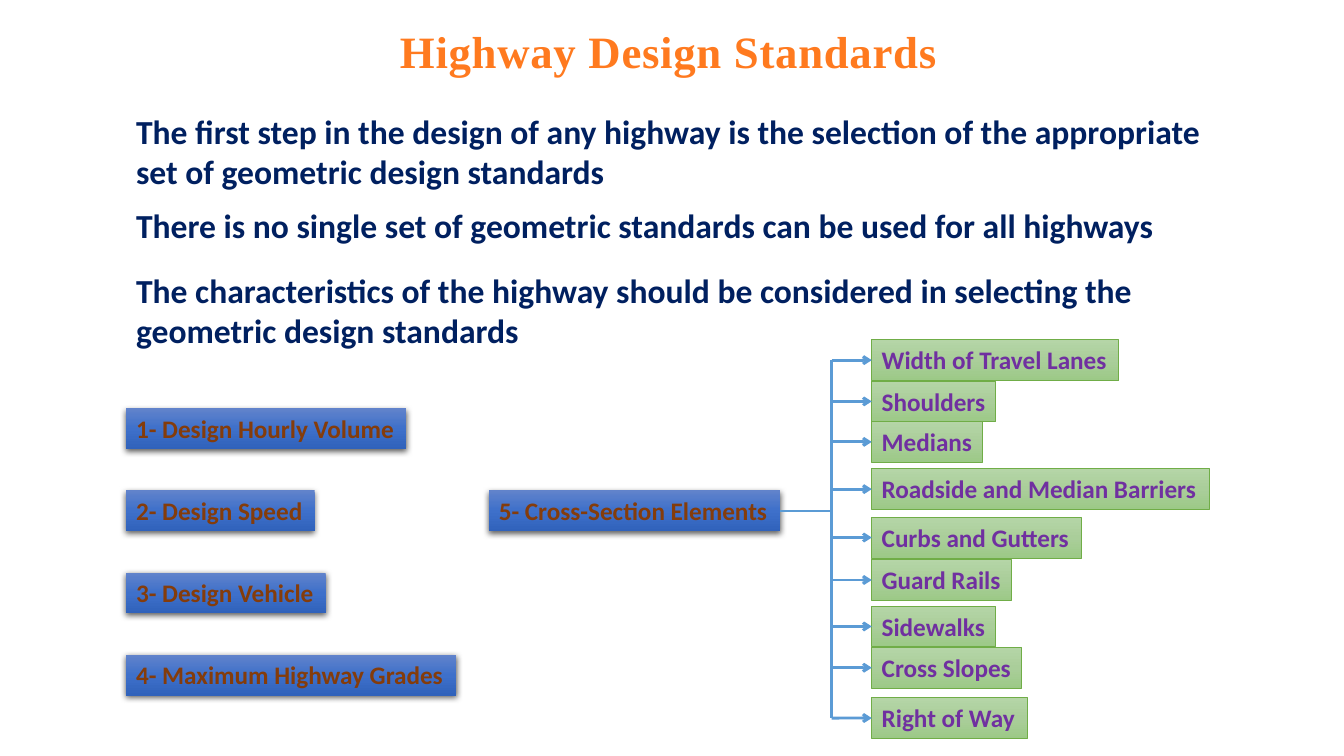
from dataclasses import dataclass

from lxml.etree import SubElement
from pptx import Presentation
from pptx.dml.color import RGBColor
from pptx.enum.shapes import MSO_CONNECTOR, MSO_SHAPE
from pptx.enum.text import MSO_ANCHOR, MSO_AUTO_SIZE, PP_ALIGN
from pptx.oxml.ns import qn
from pptx.util import Cm, Pt


@dataclass(frozen=True)
class Theme:
    body_font: str = "Calibri"
    title_font: str = "Times New Roman"
    title_size: int = 32
    body_size: int = 24
    label_size: int = 18
    title_fill: tuple = ((25, "FF7A1F"), (100, "CA5200"))
    body: str = "002060"
    standard_fill: tuple = ((0, "6183CB"), (50, "3E70CA"), (100, "3062BB"))
    standard_text: str = "843C0B"
    element_fill: tuple = ((0, "B5D5A7"), (50, "AACE9A"), (100, "9CC987"))
    element_text: str = "7030A0"
    element_edge: str = "70AD47"
    branch: str = "5B9BD5"


THEME = Theme()
LABEL_HEIGHT = 1.03

STATEMENTS = [  # text, top, width, height
    ("The first step in the design of any highway is the selection of the "
     "appropriate set of geometric design standards", 2.67, 28.37, 2.31),
    ("There is no single set of geometric standards can be used for all highways",
     5.05, 27.1, 1.32),
    ("The characteristics of the highway should be considered in selecting the "
     "geometric design standards", 6.68, 28.37, 2.31),
]
STANDARDS = [  # text, width
    ("1- Design Hourly Volume", 7.06),
    ("2- Design Speed", 4.75),
    ("3- Design Vehicle", 5.03),
    ("4- Maximum Highway Grades", 8.31),
]
ELEMENTS = [  # text, offset from the top of the tree, width
    ("Width of Travel Lanes", 0, 6.22),
    ("Shoulders", 1.04, 3.12),
    ("Medians", 2.06, 2.79),
    ("Roadside and Median Barriers", 3.25, 8.51),
    ("Curbs and Gutters", 4.47, 5.28),
    ("Guard Rails", 5.54, 3.53),
    ("Sidewalks", 6.71, 3.12),
    ("Cross Slopes", 7.75, 3.78),
    ("Right of Way", 9.02, 3.91),
]


def paint_gradient(fill, owner, stops):
    """Fill from top to bottom with the given (percent, colour) stops."""
    fill.gradient()
    fill.gradient_angle = 270
    stop_list = owner.find(".//" + qn("a:gsLst"))
    for old_stop in list(stop_list):
        stop_list.remove(old_stop)
    for percent, color in stops:
        stop = SubElement(stop_list, qn("a:gs"), pos=str(percent * 1000))
        SubElement(stop, qn("a:srgbClr"), val=color)


def add_run(frame, text, size, font, color=None):
    paragraph = frame.paragraphs[0]
    paragraph.alignment = PP_ALIGN.LEFT
    run = paragraph.add_run()
    run.text = text
    run.font.size, run.font.name, run.font.bold = Pt(size), font, True
    if color:
        run.font.color.rgb = RGBColor.from_string(color)
    return run


def add_label(slide, text, left, top, width, stops, color):
    label = slide.shapes.add_shape(
        MSO_SHAPE.RECTANGLE, Cm(left), Cm(top), Cm(width), Cm(LABEL_HEIGHT))
    paint_gradient(label.fill, label._element.spPr, stops)
    label.shadow.inherit = False
    frame = label.text_frame
    frame.word_wrap = False
    frame.auto_size = MSO_AUTO_SIZE.SHAPE_TO_FIT_TEXT
    frame.vertical_anchor = MSO_ANCHOR.TOP
    add_run(frame, text, THEME.label_size, THEME.body_font, color)
    return label


def add_standard(slide, text, left, top, width):
    label = add_label(slide, text, left, top, width,
                      THEME.standard_fill, THEME.standard_text)
    label.line.fill.background()
    effects = label._element.spPr.find(qn("a:effectLst"))
    shadow = SubElement(effects, qn("a:outerShdw"), blurRad=str(Pt(4.5)),
                        dist=str(Pt(1.5)), dir="5400000", algn="ctr", rotWithShape="0")
    black = SubElement(shadow, qn("a:srgbClr"), val="000000")
    SubElement(black, qn("a:alpha"), val="63000")
    return label


def add_element(slide, text, left, top, width):
    label = add_label(slide, text, left, top, width,
                      THEME.element_fill, THEME.element_text)
    label.line.color.rgb = RGBColor.from_string(THEME.element_edge)
    label.line.width = Pt(0.5)
    return label


def add_branch(slide, x1, y1, x2, y2, arrow=False):
    branch = slide.shapes.add_connector(
        MSO_CONNECTOR.STRAIGHT, Cm(x1), Cm(y1), Cm(x2), Cm(y2))
    branch.line.color.rgb = RGBColor.from_string(THEME.branch)
    branch.line.width = Pt(2)
    if arrow:
        SubElement(branch.line._get_or_add_ln(), qn("a:tailEnd"), type="arrow")
    SubElement(branch._element.spPr, qn("a:effectLst"))
    return branch


def add_title(slide, left, top, width, height):
    title = slide.shapes.add_textbox(Cm(left), Cm(top), Cm(width), Cm(height))
    frame = title.text_frame
    frame.word_wrap = True
    frame.vertical_anchor = MSO_ANCHOR.MIDDLE
    run = add_run(frame, "Highway Design Standards", THEME.title_size, THEME.title_font)
    frame.paragraphs[0].alignment = PP_ALIGN.CENTER
    paint_gradient(run.font.fill, run._r, THEME.title_fill)
    run._r.get_or_add_rPr().set("spc", "50")


def add_statements(slide, left):
    for text, top, width, height in STATEMENTS:
        statement = slide.shapes.add_textbox(Cm(left), Cm(top), Cm(width), Cm(height))
        frame = statement.text_frame
        frame.word_wrap = True
        frame.auto_size = MSO_AUTO_SIZE.SHAPE_TO_FIT_TEXT
        add_run(frame, text, THEME.body_size, THEME.body_font, THEME.body)


def add_standards(slide, left, top, step):
    for row, (text, width) in enumerate(STANDARDS):
        add_standard(slide, text, left, top + row * step, width)


def add_cross_section_tree(slide, left, top, root_top):
    root_width, trunk_x, element_x = 7.34, left + 8.64, left + 9.65
    half = LABEL_HEIGHT / 2

    # Root and its link to the trunk
    root = add_standard(slide, "5- Cross-Section Elements", left, root_top, root_width)
    root_y = root_top + half
    link = add_branch(slide, left + root_width, root_y, trunk_x, root_y)
    link.begin_connect(root, 3)

    # Trunk from the first element to the last
    add_branch(slide, trunk_x, top + half, trunk_x, top + ELEMENTS[-1][1] + half)

    # Elements, each with an arrow from the trunk
    for text, offset, width in ELEMENTS:
        element = add_element(slide, text, element_x, top + offset, width)
        y = top + offset + half
        arrow = add_branch(slide, trunk_x, y, element_x, y, arrow=True)
        arrow.end_connect(element, 1)


def main():
    deck = Presentation()
    deck.slide_width, deck.slide_height = Cm(33.87), Cm(19.05)
    slide = deck.slides.add_slide(deck.slide_layouts[6])
    margin, first_standard, step = 3.18, 10.29, 2.07
    add_title(slide, 8.94, 0.64, 15.82, 1.27)
    add_statements(slide, margin)
    add_standards(slide, margin, first_standard, step)
    add_cross_section_tree(slide, 12.32, 8.56, first_standard + step)
    deck.save("out.pptx")


if __name__ == "__main__":
    main()
